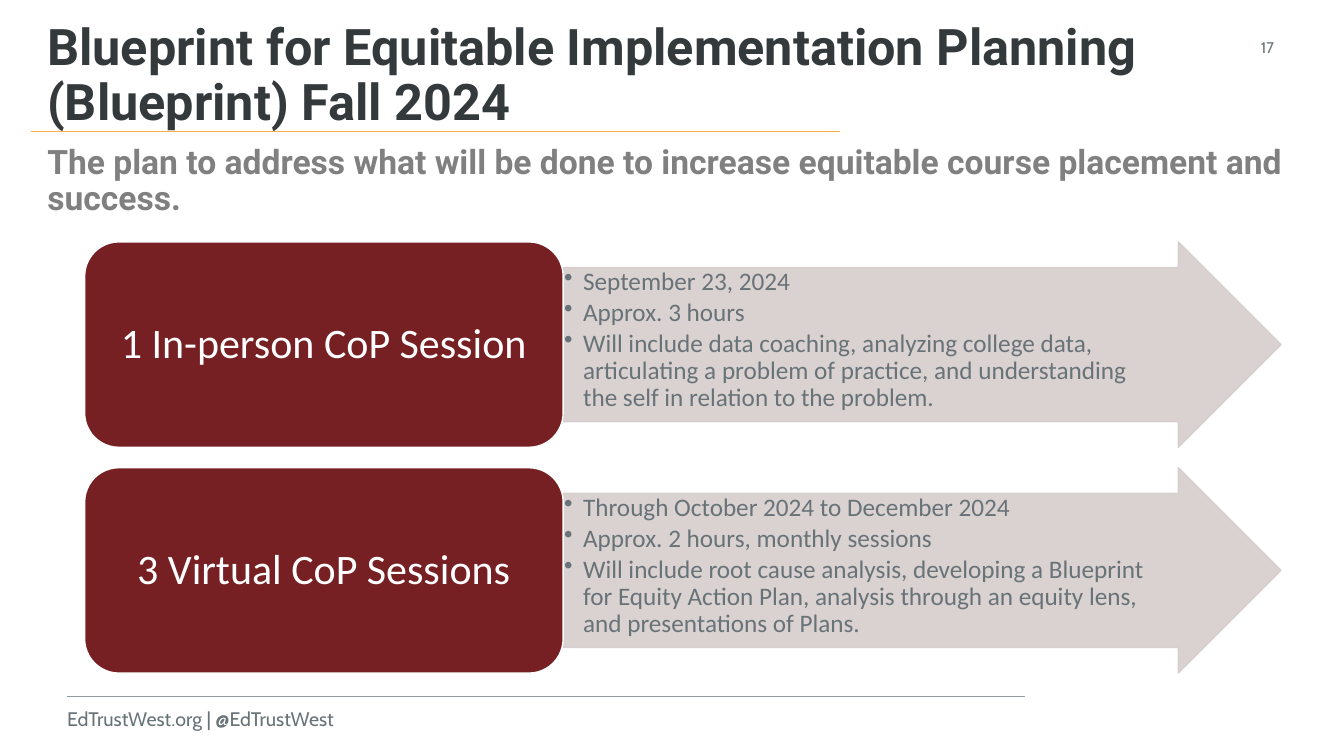
from lxml import etree
from pptx import Presentation
from pptx.dml.color import RGBColor
from pptx.enum.shapes import MSO_CONNECTOR, MSO_SHAPE
from pptx.enum.text import MSO_ANCHOR, PP_ALIGN
from pptx.oxml.ns import qn
from pptx.util import Pt

STRAIGHT = MSO_CONNECTOR.STRAIGHT
ARROW, ROUNDED = MSO_SHAPE.RIGHT_ARROW, MSO_SHAPE.ROUNDED_RECTANGLE
TOP, MIDDLE, BOTTOM = MSO_ANCHOR.TOP, MSO_ANCHOR.MIDDLE, MSO_ANCHOR.BOTTOM
LEFT, CENTER = PP_ALIGN.LEFT, PP_ALIGN.CENTER

COLORS = {
    "title": "34393C",
    "subtitle": "808080",
    "text": "687378",
    "gold": "FBB040",
    "rule": "939BA1",
    "arrow": "D6CDCD",
    "label": "762023",
    "white": "FFFFFF",
}

SESSIONS = [
    ("1 In-person CoP Session", [
        "September 23, 2024",
        "Approx. 3 hours",
        "Will include data coaching, analyzing college data, articulating a problem "
        "of practice, and understanding the self in relation to the problem.",
    ]),
    ("3 Virtual CoP Sessions", [
        "Through October 2024 to December 2024",
        "Approx. 2 hours, monthly sessions",
        "Will include root cause analysis, developing a Blueprint for Equity Action "
        "Plan, analysis through an equity lens, and presentations of Plans.",
    ]),
]


def color(name):
    return RGBColor.from_string(COLORS[name])


def set_frame(shape, anchor=TOP, insets=(0, 0, 0, 0), wrap=True):
    frame = shape.text_frame
    frame.word_wrap = wrap
    frame.vertical_anchor = anchor
    frame.margin_left, frame.margin_top, frame.margin_right, frame.margin_bottom = map(Pt, insets)
    return frame


def write(frame, text, *, font, size, fill, bold=False, align=LEFT, spacing=1.0,
          before=0, after=0, bullet_indent=0):
    paragraph = frame.paragraphs[0]
    if paragraph.runs:
        paragraph = frame.add_paragraph()
        paragraph.space_before = Pt(before)
    paragraph.alignment = align
    paragraph.line_spacing = spacing
    paragraph.space_after = Pt(after)
    if bullet_indent:
        properties = paragraph._p.get_or_add_pPr()
        properties.set("marL", str(Pt(bullet_indent)))
        properties.set("indent", str(-Pt(bullet_indent)))
        etree.SubElement(properties, qn("a:buChar"), char="•")
    run = paragraph.add_run()
    run.text = text
    run.font.name = font
    run.font.size = Pt(size)
    run.font.bold = bold
    run.font.color.rgb = color(fill)


def add_text_box(slide, left, top, width, height, **frame_format):
    shape = slide.shapes.add_textbox(Pt(left), Pt(top), Pt(width), Pt(height))
    return set_frame(shape, **frame_format)


def add_rule(slide, left, top, width, fill, weight):
    line = slide.shapes.add_connector(STRAIGHT, Pt(left), Pt(top), Pt(left + width), Pt(top))
    line.line.color.rgb = color(fill)
    line.line.width = Pt(weight)
    etree.SubElement(line._element.spPr, qn("a:effectLst"))


def add_block(slide, kind, left, top, width, height, fill, outline, opacity=100):
    shape = slide.shapes.add_shape(kind, Pt(left), Pt(top), Pt(width), Pt(height))
    shape.shadow.inherit = False
    shape.fill.solid()
    shape.fill.fore_color.rgb = color(fill)
    shape.line.color.rgb = color(outline)
    shape.line.width = Pt(1)
    if opacity < 100:
        for rgb in shape._element.spPr.iter(qn("a:srgbClr")):
            etree.SubElement(rgb, qn("a:alpha"), val=str(opacity * 1000))
    return shape


def draw_header(slide, left, top, width, height):
    frame = add_text_box(slide, left, top, width, height, anchor=BOTTOM, insets=(0, 0, 0, 18))
    write(frame, "Blueprint for Equitable Implementation Planning (Blueprint) Fall 2024",
          font="Roboto", size=36, fill="title", bold=True, spacing=0.9)
    write(frame, "The plan to address what will be done to increase equitable course "
          "placement and success.",
          font="Roboto", size=24, fill="subtitle", bold=True, spacing=0.9, before=10)
    add_rule(slide, left - 11.5, top + 79.2, 577.5, "gold", 0.75)


def draw_session(slide, left, top, width, height, title, details):
    label_width = width * 0.4
    arrow = add_block(slide, ARROW, left + label_width, top, width - label_width, height,
                      "arrow", "arrow", opacity=90)
    arrow.adjustments[0], arrow.adjustments[1] = 0.75, 0.5
    frame = set_frame(arrow, insets=(0.75, 0.75, 37, 0.75))
    for detail in details:
        write(frame, detail, font="Calibri", size=18, fill="text", spacing=0.9,
              after=2.7, bullet_indent=13.5)
    label = add_block(slide, ROUNDED, left, top, label_width, height, "label", "white")
    frame = set_frame(label, anchor=MIDDLE, insets=(8.6, 4.3, 8.6, 4.3))
    write(frame, title, font="Calibri", size=30, fill="white", align=CENTER, spacing=0.9)


def draw_sessions(slide, left, top, width, height, gap):
    row_height = (height - gap * (len(SESSIONS) - 1)) / len(SESSIONS)
    for index, (title, details) in enumerate(SESSIONS):
        draw_session(slide, left, top + index * (row_height + gap), width, row_height,
                     title, details)


def draw_footer(slide, left, top, width):
    add_rule(slide, left, top, width, "rule", 1)
    frame = add_text_box(slide, left, top, 208, 24.5, insets=(0, 7.2, 14.4, 0), wrap=False)
    write(frame, "EdTrustWest.org | @EdTrustWest", font="Cabin", size=14, fill="text")


def draw_page_number(slide, left, top, width, height):
    frame = add_text_box(slide, left, top, width, height, wrap=False)
    write(frame, "17", font="Cabin", size=11, fill="text")


def main():
    presentation = Presentation()
    presentation.slide_width, presentation.slide_height = Pt(960), Pt(540)
    slide = presentation.slides.add_slide(presentation.slide_layouts[6])
    draw_page_number(slide, 900.7, 27.4, 11.5, 13.7)
    draw_footer(slide, 48, 497.5, 684)
    draw_header(slide, 33.8, 14.4, 908, 159)
    draw_sessions(slide, 60.5, 172.8, 854.5, 308, gap=14.6)
    presentation.save("out.pptx")


if __name__ == "__main__":
    main()
